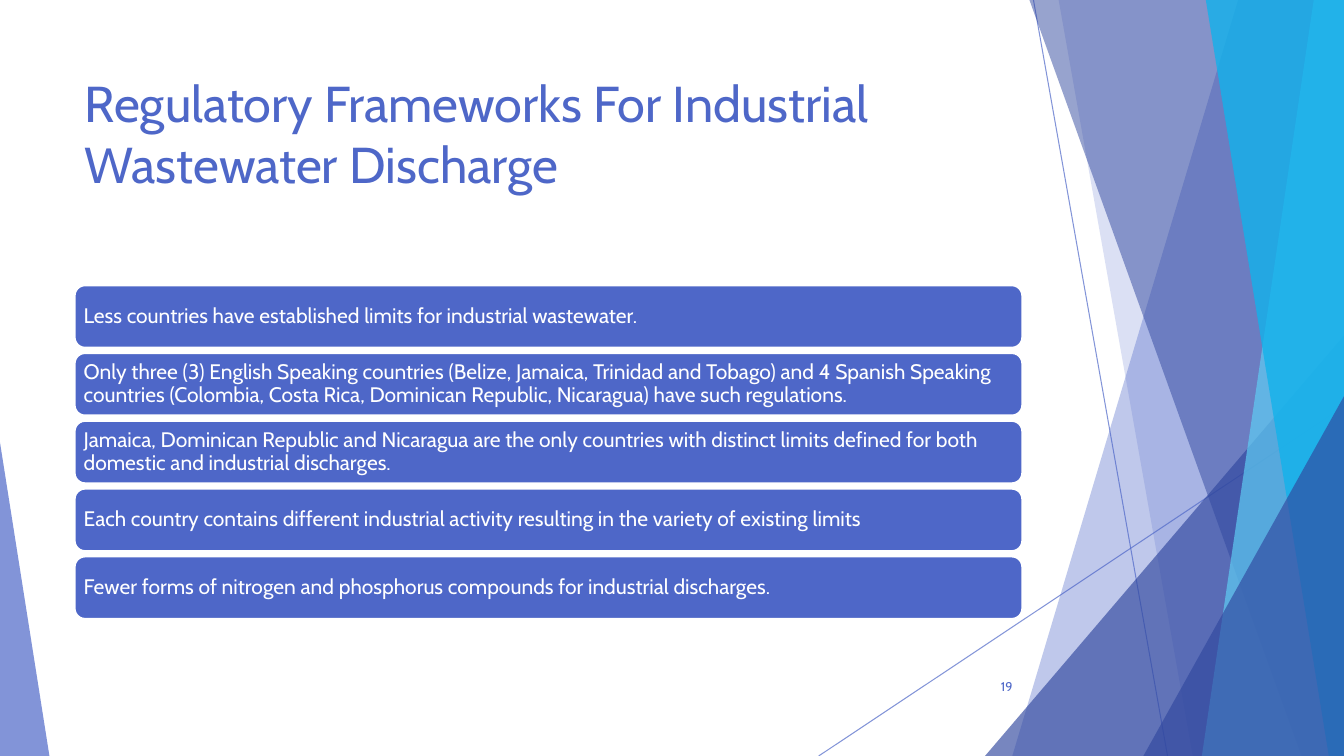
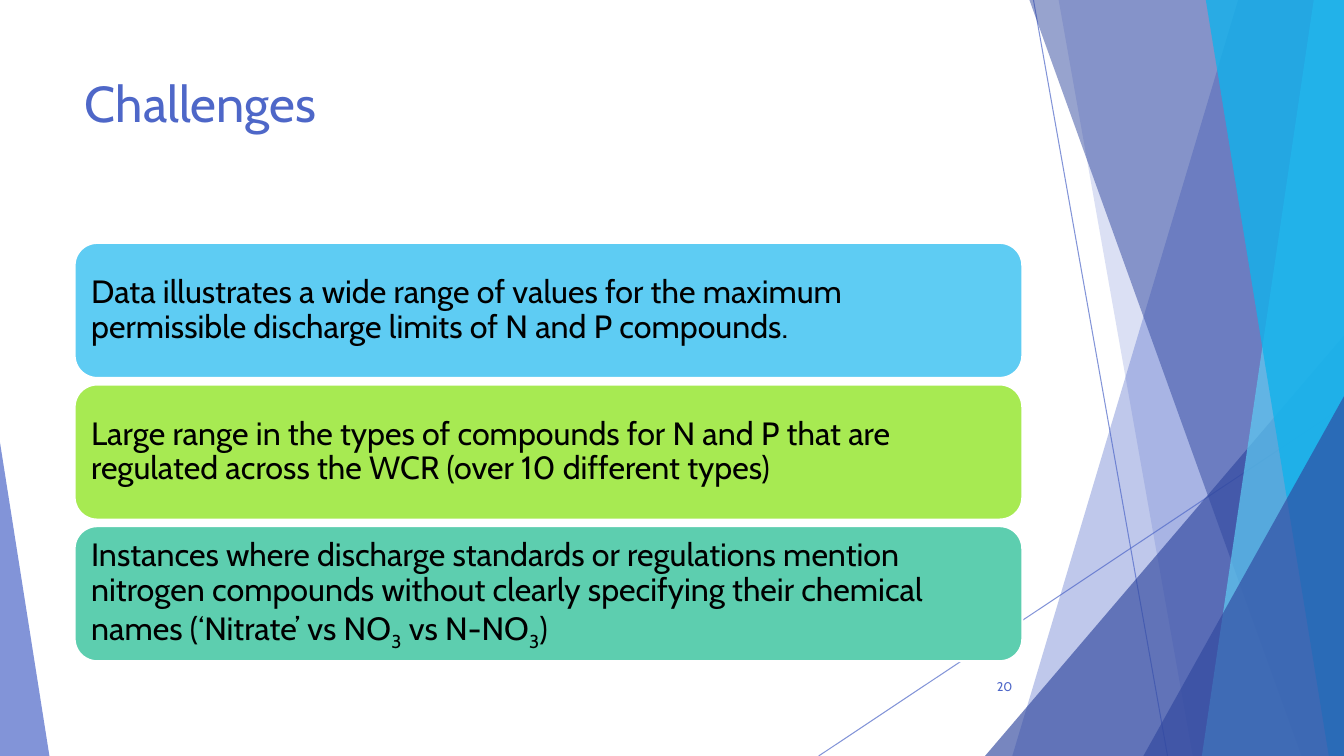
from dataclasses import dataclass
from typing import Any

from lxml.etree import SubElement
from pptx import Presentation
from pptx.dml.color import RGBColor
from pptx.enum.shapes import MSO_CONNECTOR, MSO_SHAPE
from pptx.enum.text import MSO_ANCHOR, MSO_AUTO_SIZE, PP_ALIGN
from pptx.oxml.ns import qn
from pptx.util import Inches, Pt


@dataclass(frozen=True)
class Theme:
    font: str = "Cabin"
    blue: str = "4E67C8"
    navy: str = "31489F"
    sky: str = "5ECCF3"
    cyan: str = "12B2EB"
    lime: str = "A7EA52"
    mint: str = "5DCEAF"
    white: str = "FFFFFF"
    black: str = "000000"
    title_size: float = 36
    number_size: float = 9
    list_size: float = 15
    challenge_size: float = 23
    hairline: float = 0.75
    card_line: float = 1.5


THEME = Theme()
WIDTH, HEIGHT = 13.33, 7.5
LEFT, CONTENT_WIDTH = 0.74, 9.4


@dataclass(frozen=True)
class Ray:
    start: tuple[float, float]
    end: tuple[float, float]


@dataclass(frozen=True)
class Band:
    """Four-sided band that reaches the right edge of the slide."""
    top_x: float
    bottom_x: float
    color: str
    alpha: int


@dataclass(frozen=True)
class Wedge:
    """Right triangle that stands on the bottom edge of the slide."""
    left: float
    top: float
    width: float
    apex: float
    color: str
    alpha: int


@dataclass(frozen=True)
class Card:
    fill: str
    pieces: tuple[str, ...]  # every second piece is a subscript


@dataclass(frozen=True)
class CardStack:
    top: float
    bottom: float
    card_height: float
    inset: float
    size: float
    color: str
    cards: tuple[Card, ...]


@dataclass(frozen=True)
class Page:
    title: str
    number: int
    stack: CardStack


RAYS = (Ray((10.25, 0), (11.58, HEIGHT)), Ray((WIDTH, 4.03), (8.12, HEIGHT)))

FACETS = (
    Band(12.28, 10.04, THEME.blue, 36),
    Band(10.5, 11.83, THEME.blue, 20),
    Wedge(9.77, 3.33, 3.56, 1, THEME.navy, 66),
    Band(10.21, 12.91, THEME.navy, 50),
    Band(13.03, 11.92, THEME.sky, 70),
    Band(11.96, 13.18, THEME.cyan, 80),
    Wedge(11.34, 3.93, 1.99, 1, THEME.navy, 66),
    Wedge(0, 4.39, 0.49, 0, THEME.blue, 70),
)

FRAMEWORKS = (
    "Less countries have established limits for industrial wastewater.",
    "Only three (3) English Speaking countries (Belize, Jamaica, Trinidad and Tobago) "
    "and 4 Spanish Speaking countries (Colombia, Costa Rica, Dominican Republic, "
    "Nicaragua) have such regulations.",
    "Jamaica, Dominican Republic and Nicaragua are the only countries with distinct "
    "limits defined for both domestic and industrial discharges.",
    "Each country contains different industrial activity resulting in the variety of "
    "existing limits",
    "Fewer forms of nitrogen and phosphorus compounds for industrial discharges.",
)

CHALLENGES = (
    Card(THEME.sky, ("Data illustrates a wide range of values for the maximum "
                     "permissible discharge limits of N and P compounds.",)),
    Card(THEME.lime, ("Large range in the types of compounds for N and P that are "
                      "regulated across the WCR (over 10 different types)",)),
    Card(THEME.mint, ("Instances where discharge standards or regulations mention "
                      "nitrogen compounds without clearly specifying their chemical "
                      "names (‘Nitrate’ vs NO", "3", " vs N-NO", "3", ")")),
)

PAGES = (
    Page("Regulatory Frameworks For Industrial Wastewater Discharge", 19,
         CardStack(2.83, 6.14, 0.62, 0.06, THEME.list_size, THEME.white,
                   tuple(Card(THEME.blue, (text,)) for text in FRAMEWORKS))),
    Page("Challenges", 20,
         CardStack(2.41, 6.56, 1.34, 0.1, THEME.challenge_size, THEME.black,
                   CHALLENGES)),
)


# Formatting helpers
def apply(target: Any, values: dict[str, Any]) -> None:
    for name, value in values.items():
        setattr(target, name, value)


def place(sp: Any, left: float, top: float, width: float, height: float) -> None:
    apply(sp, {"left": Inches(left), "top": Inches(top),
               "width": Inches(width), "height": Inches(height)})


def paint(fill: Any, color: str) -> None:
    fill.solid()
    fill.fore_color.rgb = RGBColor.from_string(color)


def set_alpha(sp: Any, percent: int) -> None:
    for clr in sp.element.spPr.iter(qn("a:srgbClr")):
        SubElement(clr, qn("a:alpha"), val=str(percent * 1000))


def write(tf: Any, pieces: tuple[str, ...], size: float, color: str,
          frame: dict[str, Any], para: dict[str, Any]) -> None:
    apply(tf, {"word_wrap": True, "auto_size": MSO_AUTO_SIZE.NONE, **frame})
    p = tf.paragraphs[0]
    apply(p, para)
    for i, text in enumerate(pieces):
        r = p.add_run()
        r.text = text
        apply(r.font, {"name": THEME.font, "size": Pt(size)})
        r.font.color.rgb = RGBColor.from_string(color)
        if i % 2:
            r.font._element.set("baseline", "-25000")


# Shared decoration, kept on the layout
def add_ray(shapes: Any, ray: Ray) -> Any:
    points = [Inches(v) for v in (*ray.start, *ray.end)]
    cx = shapes.add_connector(MSO_CONNECTOR.STRAIGHT, *points)
    cx.line.width = Pt(THEME.hairline)
    paint(cx.line.fill, THEME.blue)
    set_alpha(cx, 70)
    SubElement(cx.element.spPr, qn("a:effectLst"))
    return cx


def add_facet(shapes: Any, facet: Band | Wedge) -> Any:
    if isinstance(facet, Band):
        corners = [(Inches(x), Inches(y)) for x, y in (
            (facet.top_x, 0), (WIDTH, 0), (WIDTH, HEIGHT), (facet.bottom_x, HEIGHT))]
        builder = shapes.build_freeform(*corners[0])
        builder.add_line_segments(corners[1:], close=True)
        sp = builder.convert_to_shape()
    else:
        sp = shapes.add_shape(
            MSO_SHAPE.ISOSCELES_TRIANGLE, Inches(facet.left), Inches(facet.top),
            Inches(facet.width), Inches(HEIGHT - facet.top))
        sp.adjustments[0] = facet.apex
    paint(sp.fill, facet.color)
    set_alpha(sp, facet.alpha)
    sp.line.fill.background()
    sp.shadow.inherit = False
    return sp


def decorate_layout(layout: Any, slide: Any) -> None:
    """Layouts cannot create shapes, so draw on a slide and move them over."""
    drawn = [add_ray(slide.shapes, ray) for ray in RAYS]
    drawn += [add_facet(slide.shapes, facet) for facet in FACETS]
    for number, sp in enumerate(drawn, start=100):
        sp.element.xpath(".//p:cNvPr")[0].set("id", str(number))
        layout.shapes.element.append(sp.element)


# Slide content
def add_title(slide: Any, text: str) -> None:
    sp = slide.shapes.title
    place(sp, LEFT, 0.67, CONTENT_WIDTH, 1.44)
    write(sp.text_frame, (text,), THEME.title_size, THEME.blue,
          {"vertical_anchor": MSO_ANCHOR.TOP}, {"alignment": PP_ALIGN.LEFT})


def add_number(slide: Any, number: int) -> None:
    sp = slide.shapes.add_textbox(Inches(9.39), Inches(6.61), Inches(0.75), Inches(0.4))
    write(sp.text_frame, (str(number),), THEME.number_size, THEME.blue,
          {"vertical_anchor": MSO_ANCHOR.MIDDLE}, {"alignment": PP_ALIGN.RIGHT})


def add_cards(slide: Any, stack: CardStack) -> None:
    pitch = (stack.bottom - stack.top - stack.card_height) / (len(stack.cards) - 1)
    sides = ("left", "top", "right", "bottom")
    frame = {f"margin_{side}": Inches(stack.inset) for side in sides}
    frame["vertical_anchor"] = MSO_ANCHOR.MIDDLE
    for i, card in enumerate(stack.cards):
        sp = slide.shapes.add_shape(
            MSO_SHAPE.ROUNDED_RECTANGLE, Inches(LEFT), Inches(stack.top + i * pitch),
            Inches(CONTENT_WIDTH), Inches(stack.card_height))
        paint(sp.fill, card.fill)
        paint(sp.line.fill, THEME.white)
        sp.line.width = Pt(THEME.card_line)
        sp.shadow.inherit = False
        write(sp.text_frame, card.pieces, stack.size, stack.color, frame,
              {"alignment": PP_ALIGN.LEFT, "line_spacing": 0.9})


def main() -> None:
    prs = Presentation()
    apply(prs, {"slide_width": Inches(WIDTH), "slide_height": Inches(HEIGHT)})
    layout = prs.slide_layouts.get_by_name("Title Only")
    for i, page in enumerate(PAGES):
        s = prs.slides.add_slide(layout)
        if i == 0:
            decorate_layout(layout, s)
        add_title(s, page.title)
        add_number(s, page.number)
        add_cards(s, page.stack)
    prs.save("out.pptx")


if __name__ == "__main__":
    main()
